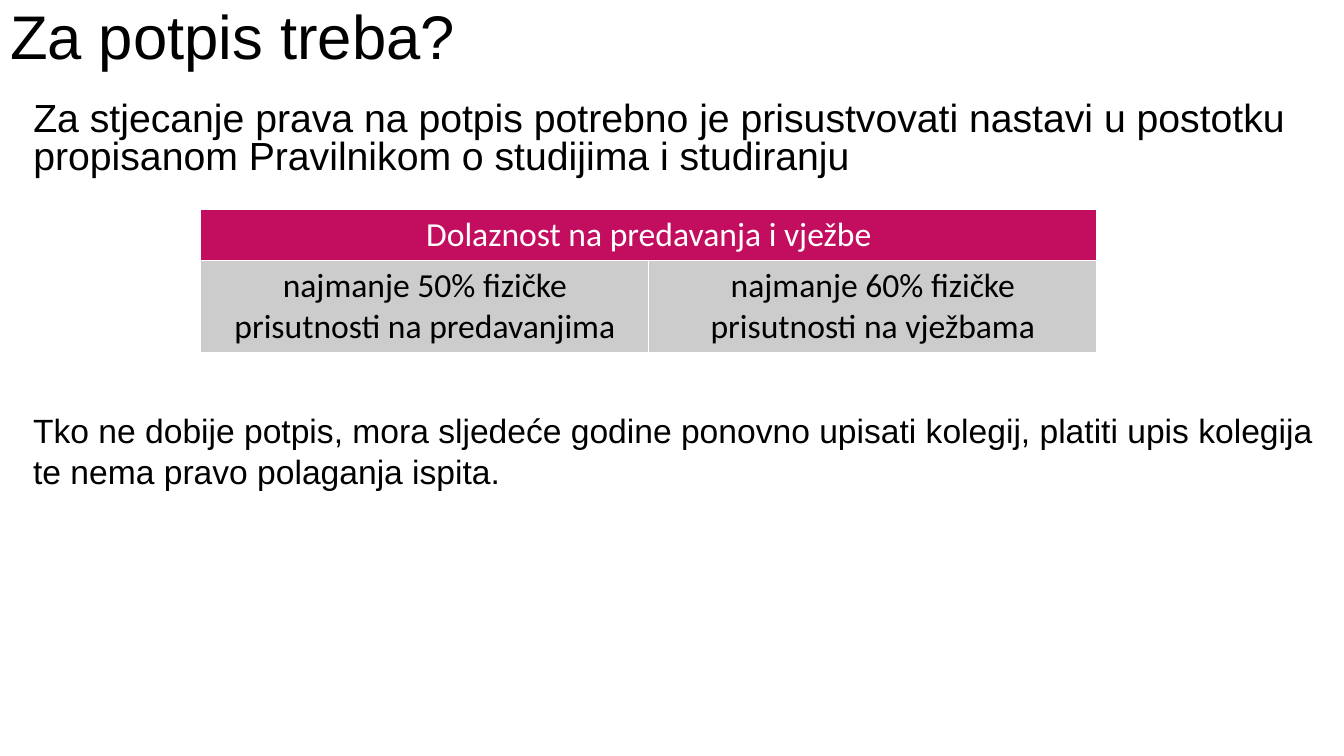
from lxml import etree
from pptx import Presentation
from pptx.dml.color import RGBColor
from pptx.enum.text import MSO_ANCHOR, MSO_AUTO_SIZE, PP_ALIGN
from pptx.oxml.ns import qn
from pptx.util import Pt

LEFT, CENTER = PP_ALIGN.LEFT, PP_ALIGN.CENTER
TOP, MIDDLE = MSO_ANCHOR.TOP, MSO_ANCHOR.MIDDLE
NO_FIT = MSO_AUTO_SIZE.NONE
TITLE_AND_CONTENT = 1


def color(value):
    return RGBColor.from_string(value)


def write(text_frame, text, font, paragraph_format):
    text_frame.text = text
    paragraph = text_frame.paragraphs[0]
    for name, value in paragraph_format.items():
        setattr(paragraph, name, value)
    run = paragraph.runs[0]
    run.font.name = font["name"]
    run.font.size = Pt(font["size"])
    run.font.bold = False
    run.font.color.rgb = color(font["color"])
    return paragraph


presentation = Presentation()
presentation.slide_width = Pt(960)
presentation.slide_height = Pt(540)
slide = presentation.slides.add_slide(presentation.slide_layouts[TITLE_AND_CONTENT])

# Title, requirement and consequence
title = slide.shapes.title
requirement = slide.placeholders[1]
consequence = slide.shapes.add_textbox(Pt(16.6), Pt(289.4), Pt(933), Pt(65.5))
texts = [
    (title, (0, 0, 828, 56.9), "Za potpis treba?", 44, 0.9, MIDDLE),
    (requirement, (16.6, 69.8, 913, 67),
     "Za stjecanje prava na potpis potrebno je prisustvovati nastavi u postotku "
     "propisanom Pravilnikom o studijima i studiranju", 28, 0.8, TOP),
    (consequence, (16.6, 289.4, 933, 65.5),
     "Tko ne dobije potpis, mora sljedeće godine ponovno upisati kolegij, "
     "platiti upis kolegija te nema pravo polaganja ispita.", 24, 1.0, TOP),
]
for shape, box, text, size, spacing, anchor in texts:
    shape.left, shape.top, shape.width, shape.height = [Pt(length) for length in box]
    frame_format = {"word_wrap": True, "auto_size": NO_FIT, "vertical_anchor": anchor}
    for name, value in frame_format.items():
        setattr(shape.text_frame, name, value)
    paragraph = write(
        shape.text_frame, text, {"name": "Arial", "size": size, "color": "000000"},
        {"alignment": LEFT, "line_spacing": spacing, "space_before": Pt(0)})
    if shape is requirement:
        properties = paragraph._p.get_or_add_pPr()
        properties.set("marL", "0")
        properties.set("indent", "0")
        etree.SubElement(properties, qn("a:buNone"))

# Attendance table
row_heights = [36.5, 65.8]
table = slide.shapes.add_table(
    2, 2, Pt(143.5), Pt(149.8), Pt(640), Pt(sum(row_heights))).table
for row, height in zip(table.rows, row_heights):
    row.height = Pt(height)
table.cell(0, 0).merge(table.cell(0, 1))

cells = [
    (0, 0, "Dolaznost na predavanja i vježbe", "C30E60", "FFFFFF"),
    (1, 0, "najmanje 50% fizičke prisutnosti na predavanjima", "CCCCCC", "000000"),
    (1, 1, "najmanje 60% fizičke prisutnosti na vježbama", "CCCCCC", "000000"),
]
for row, column, text, fill, text_color in cells:
    cell = table.cell(row, column)
    cell.vertical_anchor = MIDDLE
    write(cell.text_frame, text, {"name": "Calibri", "size": 24, "color": text_color},
          {"alignment": CENTER})
    # White borders come before the fill
    cell_properties = cell._tc.get_or_add_tcPr()
    for side in ("lnL", "lnR", "lnT", "lnB"):
        border = etree.SubElement(cell_properties, qn(f"a:{side}"), w=str(Pt(1)))
        line_fill = etree.SubElement(border, qn("a:solidFill"))
        etree.SubElement(line_fill, qn("a:srgbClr"), val="FFFFFF")
    cell.fill.solid()
    cell.fill.fore_color.rgb = color(fill)

presentation.save("out.pptx")
